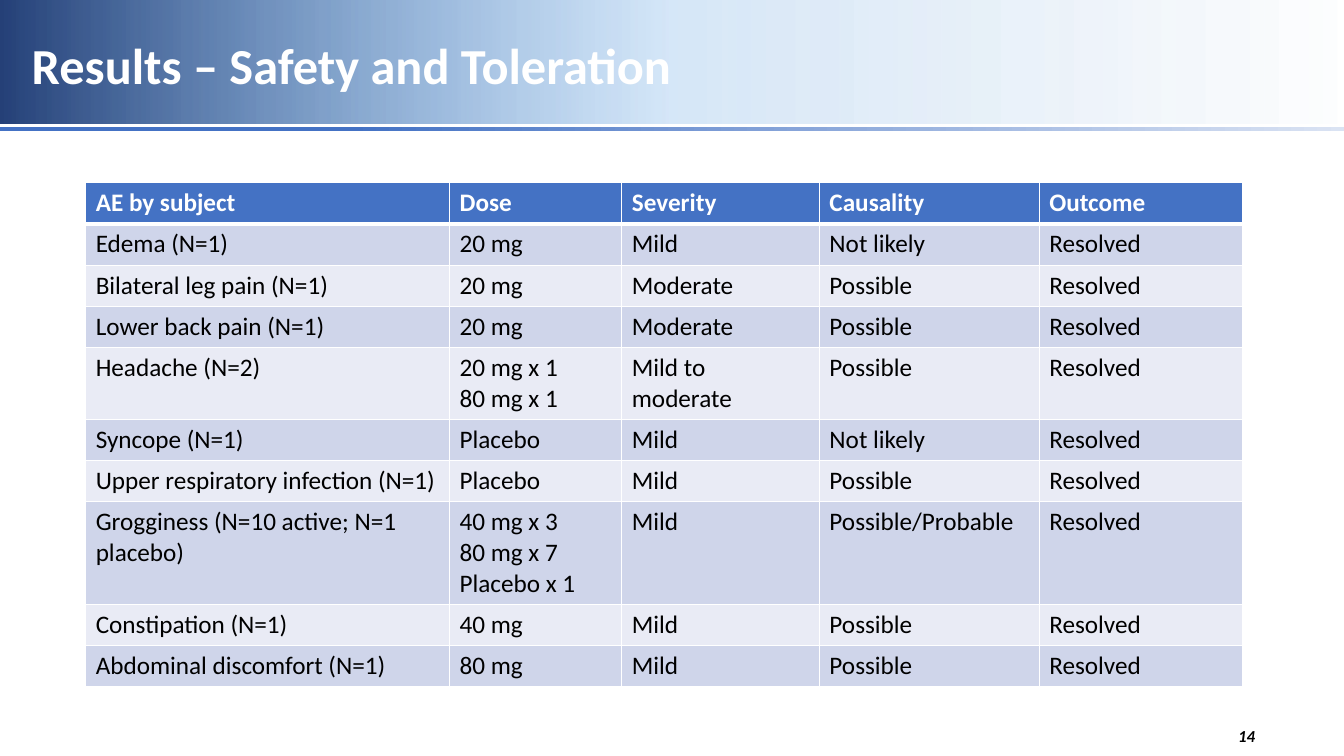
from lxml import etree
from pptx import Presentation
from pptx.dml.color import RGBColor
from pptx.enum.shapes import MSO_SHAPE
from pptx.enum.text import MSO_ANCHOR, MSO_AUTO_SIZE, PP_ALIGN
from pptx.oxml.ns import qn
from pptx.util import Cm, Pt

LEFT, RIGHT = PP_ALIGN.LEFT, PP_ALIGN.RIGHT
MIDDLE = MSO_ANCHOR.MIDDLE
NO_FIT = MSO_AUTO_SIZE.NONE
RECTANGLE = MSO_SHAPE.RECTANGLE

BLACK = RGBColor(0x00, 0x00, 0x00)
WHITE = RGBColor(0xFF, 0xFF, 0xFF)
HEADER_BLUE = RGBColor(0x44, 0x72, 0xC4)
BAND_DARK = RGBColor(0xCF, 0xD5, 0xEA)
BAND_LIGHT = RGBColor(0xE9, 0xEB, 0xF5)
NAVY = RGBColor(0x00, 0x20, 0x60)
SKY = RGBColor(0x21, 0x7D, 0xD9)
OCEAN = RGBColor(0x1B, 0x67, 0xB3)
PALE_BLUE = RGBColor(0xDA, 0xE3, 0xF3)

TITLE = "Results – Safety and Toleration"
PAGE_NUMBER = "14"
HEADINGS = ("AE by subject", "Dose", "Severity", "Causality", "Outcome")
EVENTS = [
    ("Edema (N=1)", "20 mg", "Mild", "Not likely", "Resolved"),
    ("Bilateral leg pain (N=1)", "20 mg", "Moderate", "Possible", "Resolved"),
    ("Lower back pain (N=1)", "20 mg", "Moderate", "Possible", "Resolved"),
    ("Headache (N=2)", "20 mg x 1\n80 mg x 1", "Mild to moderate", "Possible", "Resolved"),
    ("Syncope (N=1)", "Placebo", "Mild", "Not likely", "Resolved"),
    ("Upper respiratory infection (N=1)", "Placebo", "Mild", "Possible", "Resolved"),
    ("Grogginess (N=10 active; N=1 placebo)", "40 mg x 3\n80 mg x 7\nPlacebo x 1",
     "Mild", "Possible/Probable", "Resolved"),
    ("Constipation (N=1)", "40 mg", "Mild", "Possible", "Resolved"),
    ("Abdominal discomfort (N=1)", "80 mg", "Mild", "Possible", "Resolved"),
]
COLUMN_WIDTHS = (9.17, 4.34, 4.98, 5.54, 5.13)
ROW_HEIGHT = 1.04

# Each stop: position in percent, colour, opacity in percent
BANNER_STOPS = [(0, NAVY, 85), (50, SKY, 18), (100, OCEAN, 0)]
RULE_STOPS = [(26, HEADER_BLUE, 100), (100, PALE_BLUE, 100)]


def write_text(frame, text, size=18, color=BLACK, bold=False, italic=False,
               align=LEFT, line_spacing=None):
    """Fill a text frame, one paragraph for each line of text."""
    for index, line in enumerate(text.split("\n")):
        para = frame.add_paragraph() if index else frame.paragraphs[0]
        para.alignment = align
        para.line_spacing = line_spacing
        span = para.add_run()
        span.text = line
        font = span.font
        font.name, font.size = "Calibri", Pt(size)
        font.bold, font.italic = bold, italic
        font.color.rgb = color


def add_color(parent, color, opacity=100):
    node = etree.SubElement(parent, qn("a:srgbClr"), val=str(color))
    if opacity < 100:
        etree.SubElement(node, qn("a:alpha"), val=str(opacity * 1000))


def add_gradient_bar(page, top, height, stops):
    """Draw a full-width bar shaded from left to right."""
    bar = page.shapes.add_shape(RECTANGLE, 0, Cm(top), deck.slide_width, Cm(height))
    bar.shadow.inherit = False
    bar.line.fill.background()
    bar.fill.gradient()
    bar.fill.gradient_angle = 0
    stop_list = bar.element.spPr.find(".//" + qn("a:gsLst"))
    for old_stop in list(stop_list):
        stop_list.remove(old_stop)
    for position, color, opacity in stops:
        stop = etree.SubElement(stop_list, qn("a:gs"), pos=str(position * 1000))
        add_color(stop, color, opacity)


def set_borders(cell, bottom_width):
    properties = cell._tc.get_or_add_tcPr()
    widths = {"lnL": 1, "lnR": 1, "lnT": 1, "lnB": bottom_width}
    for index, (side, width) in enumerate(widths.items()):
        border = etree.Element(qn("a:" + side), w=str(Pt(width)))
        add_color(etree.SubElement(border, qn("a:solidFill")), WHITE)
        properties.insert(index, border)


def add_event_table(page):
    rows = [HEADINGS, *EVENTS]
    frame = page.shapes.add_table(len(rows), len(HEADINGS), Cm(2.16), Cm(4.6),
                                  Cm(sum(COLUMN_WIDTHS)), Cm(ROW_HEIGHT * len(rows)))
    table = frame.table
    for column, width in zip(table.columns, COLUMN_WIDTHS):
        column.width = Cm(width)
    for row_index, row in enumerate(rows):
        table.rows[row_index].height = Cm(ROW_HEIGHT)
        is_header = row_index == 0
        band = BAND_DARK if row_index % 2 else BAND_LIGHT
        for column_index, text in enumerate(row):
            cell = table.cell(row_index, column_index)
            cell.fill.solid()
            cell.fill.fore_color.rgb = HEADER_BLUE if is_header else band
            set_borders(cell, bottom_width=3 if is_header else 1)
            write_text(cell.text_frame, text, bold=is_header,
                       color=WHITE if is_header else BLACK)


deck = Presentation()
deck.slide_width, deck.slide_height = Cm(33.87), Cm(19.05)
page = deck.slides.add_slide(deck.slide_layouts[5])

add_gradient_bar(page, -0.08, 3.2, BANNER_STOPS)
add_gradient_bar(page, 3.2, 0.1, RULE_STOPS)

number_box = page.shapes.add_textbox(Cm(24.26), Cm(18.03), Cm(7.62), Cm(1.02))
number_box.text_frame.word_wrap = True
number_box.text_frame.vertical_anchor = MIDDLE
write_text(number_box.text_frame, PAGE_NUMBER, size=12, bold=True, italic=True, align=RIGHT)

title = page.shapes.title
title.left, title.top, title.width, title.height = Cm(0), Cm(0.33), Cm(31.55), Cm(2.8)
title_frame = title.text_frame
title_frame.auto_size = NO_FIT
title_frame.vertical_anchor = MIDDLE
title_frame.margin_left, title_frame.margin_right = Cm(0.8), Cm(0.25)
title_frame.margin_top = title_frame.margin_bottom = 0
write_text(title_frame, TITLE, size=36, color=WHITE, bold=True, line_spacing=0.9)
title.element.getparent().append(title.element)  # bring in front of the banner

add_event_table(page)
deck.save("out.pptx")
